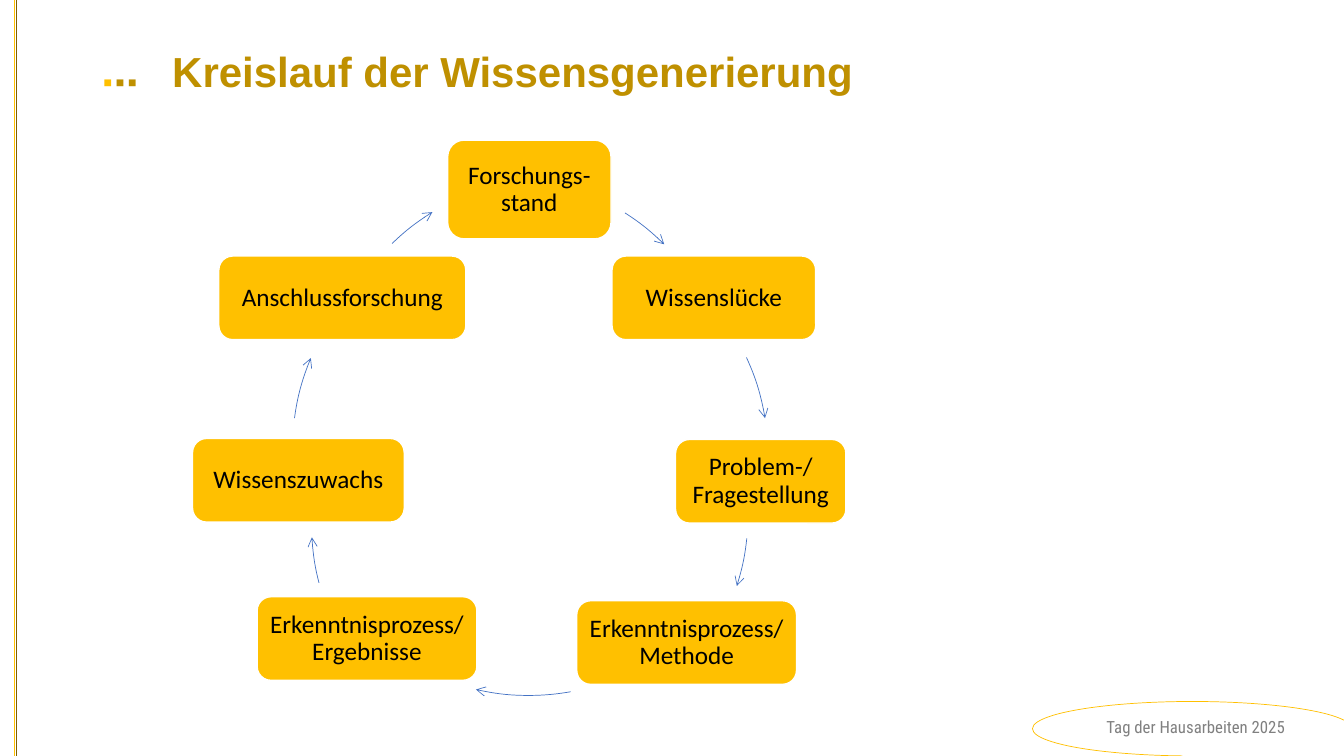
from lxml import etree
from pptx import Presentation
from pptx import util as u
from pptx.dml.color import RGBColor
from pptx.enum import shapes, text
from pptx.oxml.ns import qn

PX = 9144  # EMU; 100 px to the inch
COLORS = {"gold": "FFC000", "dark_gold": "BF9000", "brown": "806000", "blue": "4472C4",
          "gray": "808080", "black": "000000", "white": "FFFFFF"}
CYCLE_DIAMETER = 473

# label, left, top, width, height
STEPS = [
    ("Forschungs-\vstand", 444, 139, 162, 98),
    ("Wissenslücke", 607, 254, 202, 83),
    ("Problem-/ Fragestellung", 670, 436, 169, 83),
    ("Erkenntnisprozess/Methode", 572, 596, 218, 83),
    ("Erkenntnisprozess/Ergebnisse", 255, 592, 218, 83),
    ("Wissenszuwachs", 191, 435, 210, 83),
    ("Anschlussforschung", 217, 254, 245, 83),
]
# left and top of the circle, start and end angle in degrees
ARROWS = [
    (256, 174, 302.6, 314.7),
    (289, 217, 335.3, 350.6),
    (269, 273, 6, 17.7),
    (288, 217, 79.9, 102.8),
    (309, 283, 165.6, 176.7),
    (290, 210, 187.7, 202.7),
    (317, 175, 225.9, 238.2),
]


class SlideBuilder:
    def __init__(self, slide):
        self.slide = slide

    def color(self, name):
        return RGBColor.from_string(COLORS[name])

    def stroke(self, line, color, width):
        line.color.rgb = self.color(color)
        line.width = u.Pt(width)

    def add_words(self, paragraph, words, size, font, color, bold=False):
        run = paragraph.add_run()
        run.text = words
        run.font.size = u.Pt(size)
        run.font.name = font
        run.font.bold = bold
        run.font.color.rgb = self.color(color)

    def text_box(self, *box, anchor=text.MSO_ANCHOR.TOP, align=text.PP_ALIGN.LEFT):
        """Add an empty text box and return its first paragraph."""
        frame = self.slide.shapes.add_textbox(*(n * PX for n in box)).text_frame
        frame.word_wrap = True
        frame.vertical_anchor = anchor
        frame.paragraphs[0].alignment = align
        return frame.paragraphs[0]

    def shape(self, preset, *box):
        shape = self.slide.shapes.add_shape(preset, *(n * PX for n in box))
        shape.shadow.inherit = False
        return shape

    def step(self, label, *box):
        step = self.shape(shapes.MSO_SHAPE.ROUNDED_RECTANGLE, *box)
        step.fill.solid()
        step.fill.fore_color.rgb = self.color("gold")
        self.stroke(step.line, "white", 1)
        frame = step.text_frame
        frame.word_wrap = True
        frame.vertical_anchor = text.MSO_ANCHOR.MIDDLE
        frame.margin_left = frame.margin_right = 7 * PX
        frame.margin_top = frame.margin_bottom = 7 * PX
        paragraph = frame.paragraphs[0]
        paragraph.alignment = text.PP_ALIGN.CENTER
        paragraph.line_spacing = 0.9
        for index, part in enumerate(label.split("\v")):
            if index:
                paragraph.add_line_break()
            self.add_words(paragraph, part, 18, "Calibri", "black")

    def arc(self, box, start, end, color, arrow=False):
        """Draw clockwise from start to end, both in degrees."""
        arc = self.shape(shapes.MSO_SHAPE.ARC, *box)
        arc.fill.background()
        for index, angle in enumerate((start, end)):
            arc.adjustments[index] = angle * 0.6
        self.stroke(arc.line, color, 0.5)
        if arrow:
            line = arc._element.spPr.find(qn("a:ln"))
            etree.SubElement(line, qn("a:tailEnd"), type="arrow")

    def vertical_rule(self, x, color):
        rule = self.slide.shapes.add_connector(
            shapes.MSO_CONNECTOR.STRAIGHT, x * PX, 0, x * PX, 750 * PX)
        self.stroke(rule.line, color, 0.75)
        etree.SubElement(rule._element.spPr, qn("a:effectLst"))

    def title(self, words):
        paragraph = self.text_box(93, 40, 1224, 699)
        tabs = etree.SubElement(paragraph._p.get_or_add_pPr(), qn("a:tabLst"))
        etree.SubElement(tabs, qn("a:tab"), pos=str(68 * PX), algn="l")
        self.add_words(paragraph, "■", 10, "Arial", "gold", bold=True)
        self.add_words(paragraph, " ■ ■", 10, "Arial", "dark_gold", bold=True)
        self.add_words(paragraph, "\t" + words, 30, "Arial", "dark_gold", bold=True)

    def footer(self, words):
        paragraph = self.text_box(1072, 692, 228, 58, anchor=text.MSO_ANCHOR.MIDDLE,
                                  align=text.PP_ALIGN.CENTER)
        self.add_words(paragraph, words, 12, "Roboto Condensed", "gray")
        self.arc((1024, 696, 317, 54), 109.8, 356.84, "gold")


def main():
    deck = Presentation()
    deck.slide_width, deck.slide_height = u.Inches(13.33), u.Inches(7.5)
    builder = SlideBuilder(deck.slides.add_slide(deck.slide_layouts[6]))
    builder.footer("Tag der Hausarbeiten 2025")
    builder.vertical_rule(14, "gold")
    builder.vertical_rule(16, "brown")
    builder.title("Kreislauf der Wissensgenerierung")
    for step, (left, top, start, end) in zip(STEPS, ARROWS):
        builder.step(*step)
        circle = (left, top, CYCLE_DIAMETER, CYCLE_DIAMETER)
        builder.arc(circle, start, end, "blue", arrow=True)
    deck.save("out.pptx")


if __name__ == "__main__":
    main()
